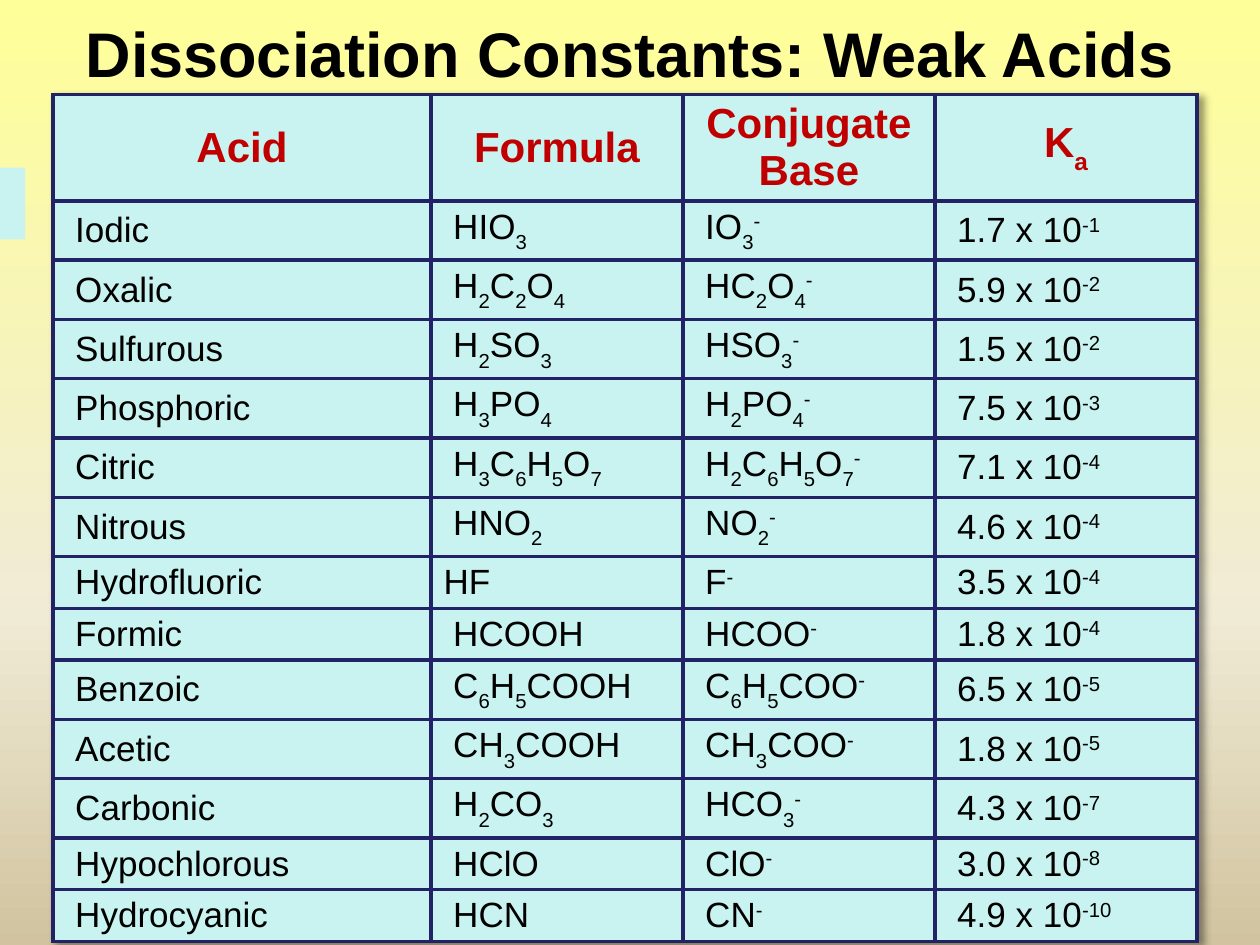
import copy
import itertools

import lxml.etree
import pptx
import pptx.dml.color
import pptx.enum.shapes
import pptx.enum.text
import pptx.oxml.ns
import pptx.util
from pptx.util import Inches

RGBColor = pptx.dml.color.RGBColor
BLACK = RGBColor(0x00, 0x00, 0x00)
RED = RGBColor(0xC0, 0x00, 0x00)
PALE_CYAN = RGBColor(0xC9, 0xF3, 0xF0)
NAVY = RGBColor(0x22, 0x22, 0x67)
YELLOW = RGBColor(0xFF, 0xFF, 0x99)
CREAM = RGBColor(0xF0, 0xEB, 0xD5)
TAN = RGBColor(0xD1, 0xC3, 0x9F)

SUBSCRIPT = -30000
SUPERSCRIPT = 30000
HARD_SPACE = chr(160)
HEADINGS = [[("Acid", 0)], [("Formula", 0)], [("Conjugate Base", 0)], [("K", 0), ("a", SUBSCRIPT)]]
ACIDS = [
    ("Iodic", "HIO3", "IO3-", "1.7", "-1"),
    ("Oxalic", "H2C2O4", "HC2O4-", "5.9", "-2"),
    ("Sulfurous", "H2SO3", "HSO3-", "1.5", "-2"),
    ("Phosphoric", "H3PO4", "H2PO4-", "7.5", "-3"),
    ("Citric", "H3C6H5O7", "H2C6H5O7-", "7.1", "-4"),
    ("Nitrous", "HNO2", "NO2-", "4.6", "-4"),
    ("Hydrofluoric", "HF", "F-", "3.5", "-4"),
    ("Formic", "HCOOH", "HCOO-", "1.8", "-4"),
    ("Benzoic", "C6H5COOH", "C6H5COO-", "6.5", "-5"),
    ("Acetic", "CH3COOH", "CH3COO-", "1.8", "-5"),
    ("Carbonic", "H2CO3", "HCO3-", "4.3", "-7"),
    ("Hypochlorous", "HClO", "ClO-", "3.0", "-8"),
    ("Hydrocyanic", "HCN", "CN-", "4.9", "-10"),
]


def formula_runs(formula):
    def baseline(symbol):
        if symbol.isdigit():
            return SUBSCRIPT
        return SUPERSCRIPT if symbol == "-" else 0

    return [("".join(group), level) for level, group in itertools.groupby(formula, baseline)]


def style_paragraph(paragraph, size, color, bold, centred):
    paragraph.font.name = "Arial"
    paragraph.font.size = pptx.util.Pt(size)
    paragraph.font.bold = bold
    paragraph.font.color.rgb = color
    if centred:
        paragraph.alignment = pptx.enum.text.PP_ALIGN.CENTER


presentation = pptx.Presentation()
presentation.slide_width = Inches(10)
presentation.slide_height = Inches(7.5)
slide = presentation.slides.add_slide(presentation.slide_layouts[6])

background = slide.background.fill
background.gradient()
background.gradient_angle = 270
first_stop = background.gradient_stops[0]._gs
first_stop.addnext(copy.deepcopy(first_stop))
for stop, position, color in zip(background.gradient_stops, (0, 0.65, 1), (YELLOW, CREAM, TAN)):
    stop.position = position
    stop.color.rgb = color

title = slide.shapes.add_textbox(Inches(0.5), Inches(0), Inches(9), Inches(0.83))
title.text_frame.word_wrap = True
title.text_frame.vertical_anchor = pptx.enum.text.MSO_ANCHOR.MIDDLE
title_paragraph = title.text_frame.paragraphs[0]
title_paragraph.add_run().text = "Dissociation Constants: Weak Acids"
style_paragraph(title_paragraph, 36, BLACK, True, True)

side_tab = slide.shapes.add_shape(
    pptx.enum.shapes.MSO_SHAPE.RECTANGLE, Inches(0), Inches(1.33), Inches(0.2), Inches(0.57))
side_tab.shadow.inherit = False
side_tab.fill.solid()
side_tab.fill.fore_color.rgb = PALE_CYAN
side_tab.line.fill.background()

rows = [HEADINGS]
for name, formula, base, mantissa, exponent in ACIDS:
    row = [[(name, 0)], formula_runs(formula), formula_runs(base),
           [(f"{mantissa} x 10", 0), (exponent, SUPERSCRIPT)]]
    for runs in row:
        if runs[0][0] != "HF":
            runs[0] = (HARD_SPACE + runs[0][0], runs[0][1])
        runs[-1] = (runs[-1][0] + HARD_SPACE, runs[-1][1])
    rows.append(row)

table = slide.shapes.add_table(
    len(rows), len(HEADINGS), Inches(0.42), Inches(0.75), Inches(9.08), Inches(6.53)).table
for column, width in zip(table.columns, (3, 2, 2, 2.08)):
    column.width = Inches(width)
for index, table_row in enumerate(table.rows):
    table_row.height = Inches(0.27 if index else 0.75)

namespace = pptx.oxml.ns.nsdecls("a")
table._tbl.tblPr.insert(0, lxml.etree.fromstring(
    f'<a:effectLst {namespace}><a:outerShdw blurRad="50800" dist="38100" dir="2700000">'
    '<a:srgbClr val="000000"><a:alpha val="40000"/></a:srgbClr></a:outerShdw></a:effectLst>'))

for row_index, row in enumerate(rows):
    is_heading = row_index == 0
    for column_index, runs in enumerate(row):
        cell = table.cell(row_index, column_index)
        cell.vertical_anchor = pptx.enum.text.MSO_ANCHOR.MIDDLE
        cell.margin_top = cell.margin_bottom = pptx.util.Pt(1.6 if is_heading else 2.8)
        for side in ("lnL", "lnR", "lnT", "lnB"):
            cell._tc.get_or_add_tcPr().append(lxml.etree.fromstring(
                f'<a:{side} {namespace} w="{pptx.util.Pt(2.25)}"><a:solidFill>'
                f'<a:srgbClr val="{NAVY}"/></a:solidFill></a:{side}>'))
        cell.fill.solid()
        cell.fill.fore_color.rgb = PALE_CYAN
        paragraph = cell.text_frame.paragraphs[0]
        style_paragraph(paragraph, 24 if is_heading else 20, RED if is_heading else BLACK,
                        is_heading, is_heading)
        for text, baseline in runs:
            run = paragraph.add_run()
            run.text = text
            if baseline:
                run._r.get_or_add_rPr().set("baseline", str(baseline))

presentation.save("out.pptx")
